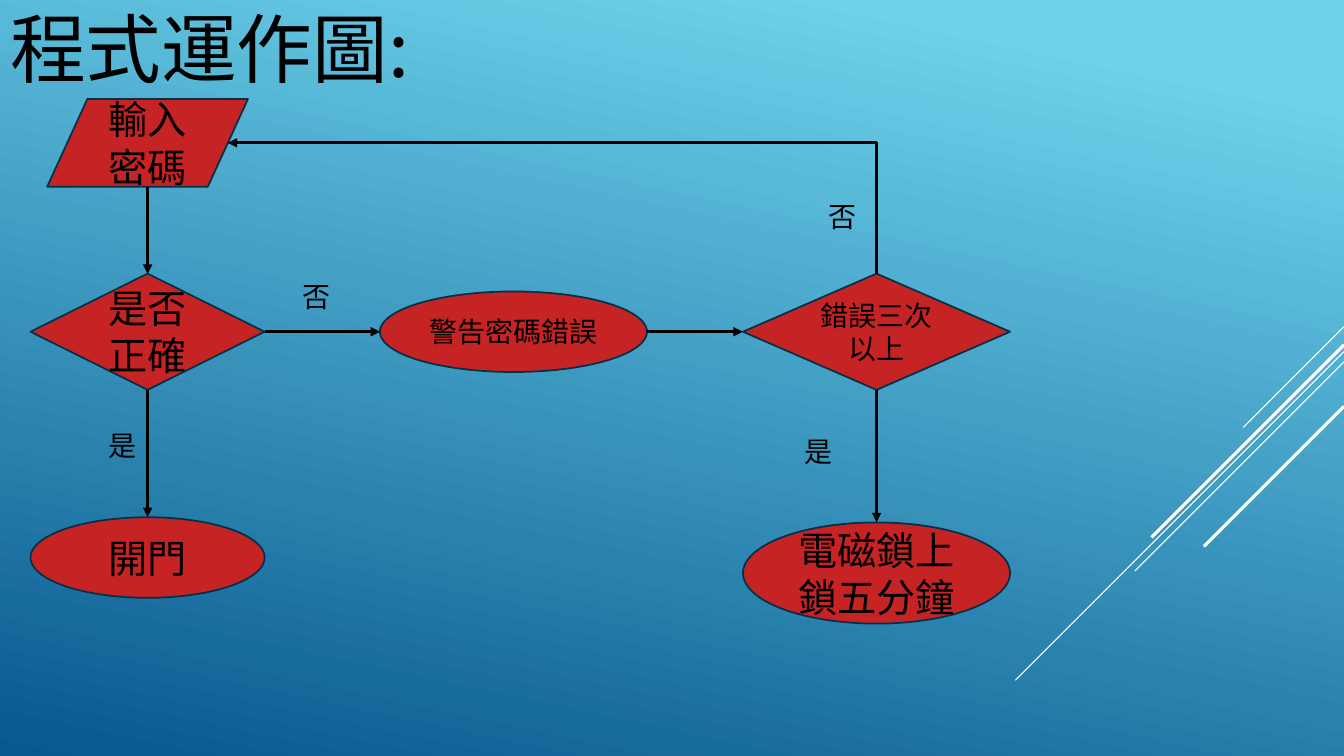
"""Build the flowchart slide of a password lock program."""
import pptx
import pptx.dml.color
import pptx.enum.shapes
import pptx.enum.text
import pptx.oxml.ns
import pptx.util
from lxml import etree
from pptx.util import Cm

FONT = "Noto Sans CJK SC"
COLORS = {
    "sky": "6ED2EB",
    "deep": "06588E",
    "node": "C62324",
    "edge": "043148",
    "ink": "000000",
    "streak": "FFFFFF",
}
SHAPES = pptx.enum.shapes.MSO_SHAPE
CONNECTORS = pptx.enum.shapes.MSO_CONNECTOR
ALIGN = pptx.enum.text.PP_ALIGN
ANCHOR = pptx.enum.text.MSO_ANCHOR
qn = pptx.oxml.ns.qn


def color(name):
    return pptx.dml.color.RGBColor.from_string(COLORS[name])


def format_text(text_frame, text, size, align, anchor, wrap):
    text_frame.text = text
    text_frame.word_wrap = wrap
    text_frame.vertical_anchor = anchor
    paragraph = text_frame.paragraphs[0]
    paragraph.alignment = align
    run = paragraph.runs[0]
    run.font.size = pptx.util.Pt(size)
    run.font.name = FONT
    run.font.color.rgb = color("ink")
    etree.SubElement(run.font._element, qn("a:ea"), typeface=FONT)
    return run


def paint_background(slide):
    fill = slide.background.fill
    fill.gradient()
    fill.gradient_angle = 258
    for stop, name, position in zip(fill.gradient_stops, ("sky", "deep"), (0.1, 1)):
        stop.color.rgb = color(name)
        stop.position = position


def set_title(slide, text):
    title = slide.shapes.title
    title.left, title.top = Cm(0), Cm(-0.08)
    title.width, title.height = Cm(11.1), Cm(2.57)
    format_text(title.text_frame, text, 54, ALIGN.LEFT, ANCHOR.TOP, False)
    title.text_frame.auto_size = pptx.enum.text.MSO_AUTO_SIZE.NONE


def add_node(slide, kind, text, size, center_x, center_y, width, height):
    shape = slide.shapes.add_shape(
        kind, Cm(center_x - width / 2), Cm(center_y - height / 2), Cm(width), Cm(height))
    shape.shadow.inherit = False
    shape.fill.solid()
    shape.fill.fore_color.rgb = color("node")
    shape.line.color.rgb = color("edge")
    shape.line.width = pptx.util.Pt(1.25)
    format_text(shape.text_frame, text, size, ALIGN.CENTER, ANCHOR.MIDDLE, True)


def add_label(slide, text, left, top):
    box = slide.shapes.add_textbox(Cm(left), Cm(top), Cm(1.22), Cm(1.11))
    run = format_text(box.text_frame, text, 20, ALIGN.LEFT, ANCHOR.TOP, False)
    outline = etree.Element(qn("a:ln"), w=str(pptx.util.Pt(0.75)))
    fill = etree.SubElement(outline, qn("a:solidFill"))
    etree.SubElement(fill, qn("a:srgbClr"), val=COLORS["ink"])
    run.font._element.insert(0, outline)


def add_line(slide, start, end, name, width, kind=CONNECTORS.STRAIGHT):
    line = slide.shapes.add_connector(kind, *map(Cm, start + end))
    line.line.color.rgb = color(name)
    line.line.width = pptx.util.Pt(width)
    etree.SubElement(line._element.spPr, qn("a:effectLst"))
    return line


def add_arrow(slide, start, end):
    arrow = add_line(slide, start, end, "ink", 2.25)
    etree.SubElement(arrow.line._get_or_add_ln(), qn("a:tailEnd"), type="triangle")


def add_return_arrow(slide, target, source):
    """Draw a one-bend connector whose arrowhead is at target."""
    arrow = add_line(slide, target, source, "ink", 2.25, CONNECTORS.ELBOW)
    arrow._element.spPr.find(qn("a:prstGeom")).set("prst", "bentConnector2")
    etree.SubElement(arrow.line._get_or_add_ln(), qn("a:headEnd"), type="triangle")


def add_streaks(slide):
    right = 33.87
    for top, length, width in (
        (8.23, 2.54, 0.75),
        (8.86, 8.28, 0.75),
        (9.12, 5.27, 0.75),
        (8.69, 4.85, 2.25),
        (10.24, 3.53, 2.25),
    ):
        add_line(slide, (right, top), (right - length, top + length), "streak", width)


def main():
    presentation = pptx.Presentation()
    presentation.slide_width, presentation.slide_height = Cm(33.87), Cm(19.05)
    slide = presentation.slides.add_slide(presentation.slide_layouts[5])
    paint_background(slide)
    add_streaks(slide)
    set_title(slide, "程式運作圖:")

    left_x, warning_x, right_x = 3.72, 12.94, 22.09
    input_y, check_y = 3.6, 8.36
    add_node(slide, SHAPES.FLOWCHART_DATA, "輸入密碼", 28, left_x, input_y, 5.06, 2.21)
    add_node(slide, SHAPES.DIAMOND, "是否正確", 28, left_x, check_y, 5.9, 2.93)
    add_node(slide, SHAPES.OVAL, "警告密碼錯誤", 20, warning_x, check_y, 6.73, 2.03)
    add_node(slide, SHAPES.DIAMOND, "錯誤三次以上", 20, right_x, check_y, 6.73, 2.93)
    add_node(slide, SHAPES.OVAL, "開門", 28, left_x, 14.05, 5.9, 2.03)
    add_node(slide, SHAPES.OVAL, "電磁鎖上鎖五分鐘", 28, right_x, 14.44, 6.73, 2.55)

    for start, end in (
        ((left_x, 4.7), (left_x, 6.9)),
        ((left_x, 9.83), (left_x, 13.03)),
        ((6.67, check_y), (9.58, check_y)),
        ((16.31, check_y), (18.72, check_y)),
        ((right_x, 9.83), (right_x, 13.16)),
    ):
        add_arrow(slide, start, end)
    add_return_arrow(slide, (5.74, input_y), (right_x, 6.9))

    for text, left, top in (
        ("否", 7.37, 6.91),
        ("是", 2.49, 10.67),
        ("是", 20.02, 10.82),
        ("否", 20.62, 4.9),
    ):
        add_label(slide, text, left, top)
    presentation.save("out.pptx")


if __name__ == "__main__":
    main()
